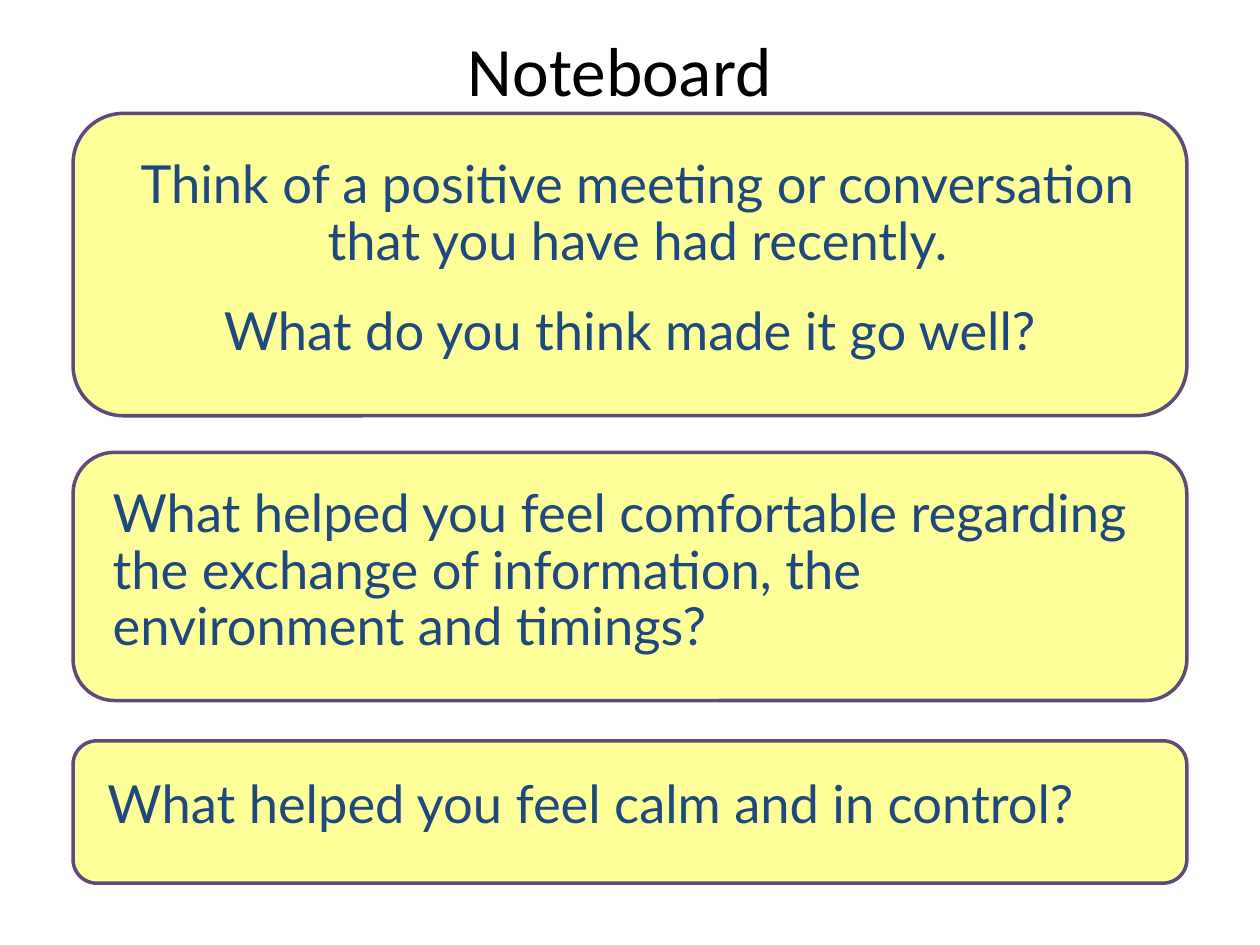
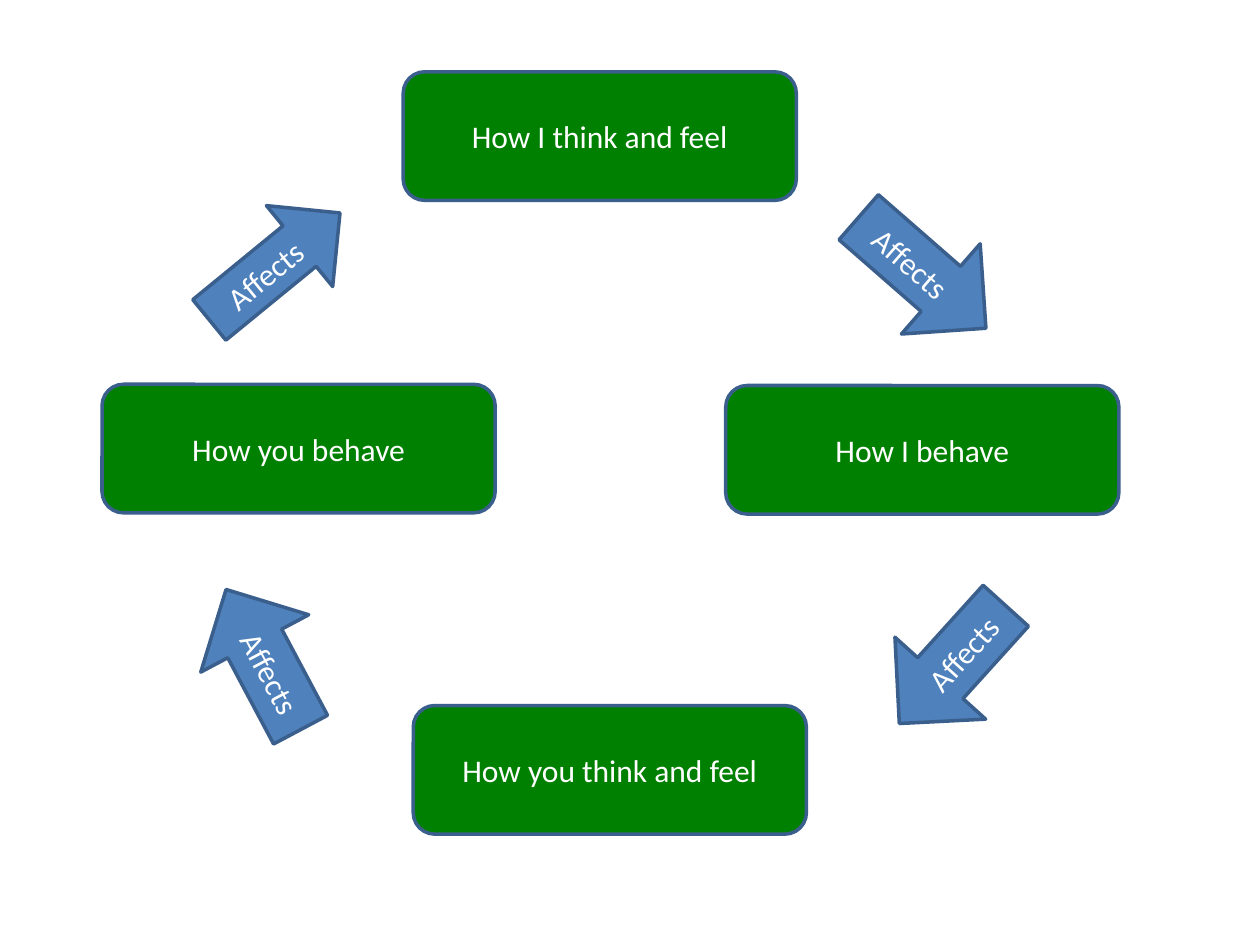
"""Build two slides: reflection prompts and the cycle of thoughts and behaviour."""
from dataclasses import dataclass

import pptx
import pptx.dml.color
import pptx.enum.shapes
import pptx.enum.text
import pptx.util

COLUMNS, ROWS = 100, 75
TITLE_ONLY, BLANK = 5, 6
SHAPES = pptx.enum.shapes.MSO_SHAPE
ALIGN = pptx.enum.text.PP_ALIGN
ANCHOR = pptx.enum.text.MSO_ANCHOR


@dataclass(frozen=True)
class Theme:
    """Colours, fonts and type sizes of the deck."""

    title_text: str = "000000"
    prompt_text: str = "1F497D"
    prompt_fill: str = "FFFF99"
    prompt_line: str = "604A7B"
    cycle_text: str = "FFFFFF"
    state_fill: str = "008000"
    arrow_fill: str = "4F81BD"
    cycle_line: str = "3A5F8C"
    body_font: str = "Calibri"
    prompt_font: str = "Lato"
    title_size: float = 39.6
    prompt_size: float = 30
    cycle_size: float = 18
    line_width: float = 2


THEME = Theme()
SLIDE_WIDTH, SLIDE_HEIGHT = pptx.util.Inches(10), pptx.util.Inches(7.5)
PROMPT_INDENT = pptx.util.Inches(0.12)
TIGHT = {"line_spacing": 0.9}
CENTRED = {"alignment": ALIGN.CENTER}
LEFT = {"alignment": ALIGN.LEFT}

PROMPTS = [
    (9, 24, 0.24, [
        ("Think of a positive meeting or conversation that you have had recently.",
         CENTRED | TIGHT, PROMPT_INDENT),
        ("What do you think made it go well?",
         CENTRED | {"space_before": pptx.util.Pt(15)}, 0),
    ]),
    (35.9, 19.7, 0.18, [
        ("What helped you feel comfortable regarding the exchange of information, "
         "the environment and timings?", LEFT | TIGHT, PROMPT_INDENT),
    ]),
    (58.8, 11.3, 0.24, [
        ("What helped you feel calm and in control?", LEFT | TIGHT, PROMPT_INDENT),
    ]),
]

STATES = [
    ("How I think and feel", 32, 5.7),
    ("How I behave", 57.6, 30.6),
    ("How you think and feel", 32.8, 56),
    ("How you behave", 8.1, 30.5),
]
ARROWS = [
    (SHAPES.RIGHT_ARROW, (66.5, 16.9, 13.4, 9.5), 41.1),
    (SHAPES.LEFT_ARROW, (69.3, 47.9, 12.6, 9.7), 312.1),
    (SHAPES.LEFT_ARROW, (14.6, 47.5, 12.6, 9.7), 62),
    (SHAPES.RIGHT_ARROW, (15.1, 17, 13.4, 8.3), 320.7),
]


def apply(target, values):
    """Set each named attribute on the target."""
    for name, value in values.items():
        setattr(target, name, value)


def cells(left, top, width, height):
    """Turn grid columns and rows into slide lengths."""
    return (int(SLIDE_WIDTH * left / COLUMNS), int(SLIDE_HEIGHT * top / ROWS),
            int(SLIDE_WIDTH * width / COLUMNS), int(SLIDE_HEIGHT * height / ROWS))


def rgb(code):
    """Turn a hexadecimal code into a colour."""
    return pptx.dml.color.RGBColor.from_string(code)


def write(paragraph, text, font, size, colour, values):
    """Write formatted text into a paragraph."""
    apply(paragraph, values)
    run = paragraph.add_run()
    run.text = text
    apply(run.font, {"name": font, "size": pptx.util.Pt(size)})
    run.font.color.rgb = rgb(colour)


def add_block(shapes, kind, position, fill, line):
    """Add a flat filled shape with an outline."""
    shape = shapes.add_shape(kind, *cells(*position))
    shape.shadow.inherit = False
    shape.fill.solid()
    shape.fill.fore_color.rgb = rgb(fill)
    shape.line.color.rgb = rgb(line)
    shape.line.width = pptx.util.Pt(THEME.line_width)
    apply(shape.text_frame, {"word_wrap": True, "vertical_anchor": ANCHOR.MIDDLE})
    return shape


def add_title(slide, text):
    """Place and fill the title placeholder."""
    title = slide.shapes.title
    apply(title, dict(zip(("left", "top", "width", "height"), cells(5, 3, 88.4, 4.9))))
    apply(title.text_frame, {"word_wrap": True, "vertical_anchor": ANCHOR.MIDDLE})
    write(title.text_frame.paragraphs[0], text, THEME.body_font, THEME.title_size,
          THEME.title_text, CENTRED)


def add_prompt(slide, top, height, inset, lines):
    """Add a full-width card holding one or more prompts."""
    card = add_block(slide.shapes, SHAPES.ROUNDED_RECTANGLE, (5.8, top, 88.4, height),
                     THEME.prompt_fill, THEME.prompt_line)
    frame = card.text_frame
    apply(frame, {"vertical_anchor": ANCHOR.TOP, "margin_top": pptx.util.Inches(inset)})
    for index, (text, values, indent) in enumerate(lines):
        paragraph = frame.add_paragraph() if index else frame.paragraphs[0]
        write(paragraph, text, THEME.prompt_font, THEME.prompt_size,
              THEME.prompt_text, values)
        paragraph._p.get_or_add_pPr().set("marL", str(int(indent)))


def add_cycle_part(shapes, kind, position, fill, text, rotation=0):
    """Add a labelled state or arrow of the cycle."""
    part = add_block(shapes, kind, position, fill, THEME.cycle_line)
    part.rotation = rotation
    write(part.text_frame.paragraphs[0], text, THEME.body_font, THEME.cycle_size,
          THEME.cycle_text, CENTRED)


def build_prompts(presentation):
    """Build the slide of reflection prompts."""
    slide = presentation.slides.add_slide(presentation.slide_layouts[TITLE_ONLY])
    add_title(slide, "Noteboard")
    for prompt in PROMPTS:
        add_prompt(slide, *prompt)


def build_cycle(presentation):
    """Build the slide of the four-state cycle."""
    slide = presentation.slides.add_slide(presentation.slide_layouts[BLANK])
    shapes = slide.shapes.add_group_shape().shapes
    for (text, left, top), (kind, position, rotation) in zip(STATES, ARROWS):
        add_cycle_part(shapes, SHAPES.ROUNDED_RECTANGLE, (left, top, 31.2, 10.2),
                       THEME.state_fill, text)
        add_cycle_part(shapes, kind, position, THEME.arrow_fill, "Affects", rotation)


def main():
    """Build and save the deck."""
    presentation = pptx.Presentation()
    apply(presentation, {"slide_width": SLIDE_WIDTH, "slide_height": SLIDE_HEIGHT})
    build_prompts(presentation)
    build_cycle(presentation)
    presentation.save("out.pptx")


if __name__ == "__main__":
    main()
